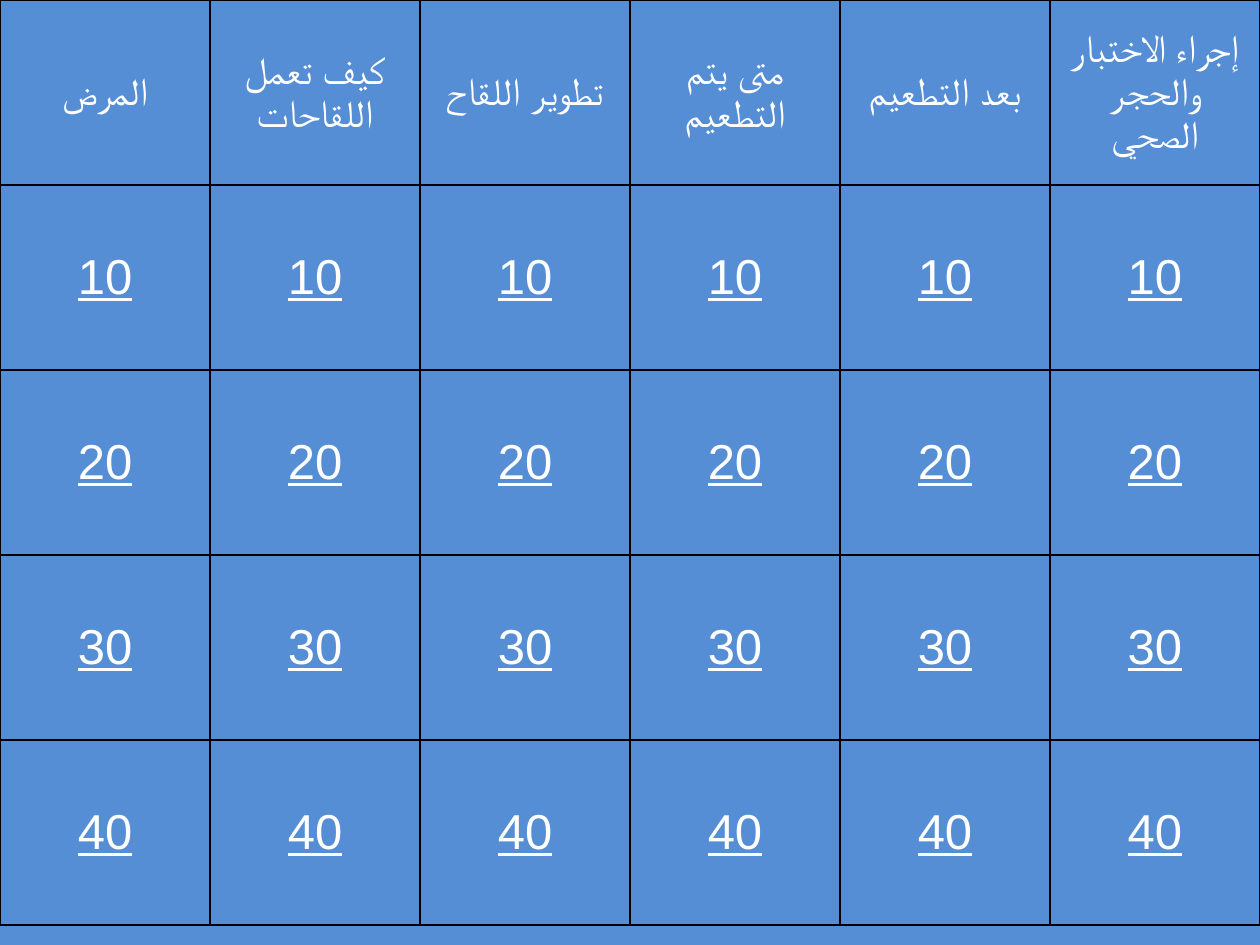
"""Build a quiz board about vaccines with five rows and six topics."""

from dataclasses import dataclass

from lxml.etree import SubElement
from pptx import Presentation
from pptx.dml.color import RGBColor
from pptx.enum.text import MSO_ANCHOR, PP_ALIGN
from pptx.oxml.ns import qn
from pptx.util import Pt

PX = 914400 // 126
WIDE, HIGH = 1260, 945
COLS, ROWS = 210, 185
COLOR = {"back": "558ED5", "text": "FFFFFF", "line": "000000"}
TOPICS = (
    "المرض",
    "كيف تعمل اللقاحات",
    "تطوير اللقاح",
    "متى يتم التطعيم",
    "بعد التطعيم",
    "إجراء الاختبار والحجر الصحي",
)
POINTS = (10, 20, 30, 40)
HEAD = {"name": "Arial", "size": Pt(22), "underline": False}
SCORE = {"name": "Arial", "size": Pt(28), "underline": True}
PLAIN = {
    "first_row": False,
    "horz_banding": False,
}


@dataclass
class Band:
    """A row of labels that share one text format."""

    labels: tuple[str, ...]
    style: dict


def apply(item: object, style: dict) -> None:
    """Set each attribute named in the style."""
    for key, value in style.items():
        setattr(item, key, value)


def edge(cell) -> None:
    """Give a cell a thin line on all four sides."""
    props = cell._tc.get_or_add_tcPr()
    for side in "LRTB":
        line = SubElement(props, qn(f"a:ln{side}"), w=str(Pt(1)))
        fill = SubElement(line, qn("a:solidFill"))
        SubElement(fill, qn("a:srgbClr"), val=COLOR["line"])


def write(cell, label: str, style: dict) -> None:
    """Put a centred right-to-left label in a cell."""
    edge(cell)
    cell.fill.background()
    cell.vertical_anchor = MSO_ANCHOR.MIDDLE
    para = cell.text_frame.paragraphs[0]
    para.alignment = PP_ALIGN.CENTER
    para._p.get_or_add_pPr().set("rtl", "1")
    run = para.add_run()
    run.text = label
    apply(run.font, style)
    run.font.color.rgb = RGBColor.from_string(COLOR["text"])
    SubElement(run._r.get_or_add_rPr(), qn("a:cs"), typeface=style["name"])


def board(slide, bands: list[Band]) -> None:
    """Draw all bands as one table."""
    rows, cols = len(bands), len(TOPICS)
    frame = slide.shapes.add_table(
        rows, cols, 0, 0, cols * COLS * PX, rows * ROWS * PX
    )
    grid = frame.table
    apply(grid, PLAIN)
    for row, band in enumerate(bands):
        for col, label in enumerate(band.labels):
            write(grid.cell(row, col), label, band.style)


def main() -> None:
    """Build and save the slide."""
    deck = Presentation()
    apply(deck, {"slide_width": WIDE * PX, "slide_height": HIGH * PX})
    slide = deck.slides.add_slide(deck.slide_layouts[6])
    back = slide.background.fill
    back.solid()
    back.fore_color.rgb = RGBColor.from_string(COLOR["back"])
    bands = [Band(TOPICS, HEAD)]
    bands += [Band((str(score),) * len(TOPICS), SCORE) for score in POINTS]
    board(slide, bands)
    deck.save("out.pptx")


if __name__ == "__main__":
    main()
